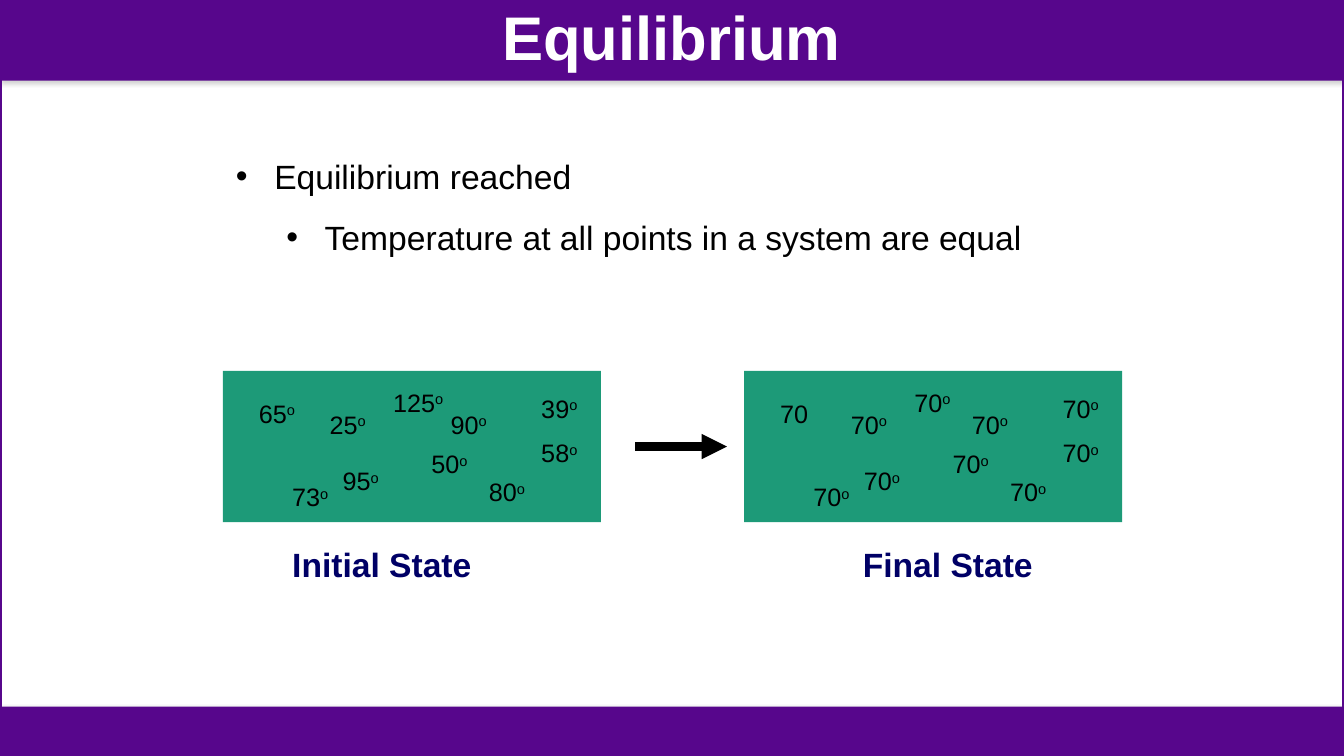
from lxml import etree
from pptx import Presentation
from pptx.dml.color import RGBColor as RGB
from pptx.enum.shapes import MSO_CONNECTOR as Link, MSO_SHAPE as Form
from pptx.enum.text import MSO_ANCHOR as Anchor, MSO_AUTO_SIZE as Auto, PP_ALIGN as Align
from pptx.oxml.ns import qn
from pptx.util import Inches, Pt

COLORS = {"purple": "57068C", "green": "1D9A78", "navy": "000066",
          "black": "000000", "white": "FFFFFF", "gray": "808080"}
SPOTS = [(0.26, 0.22), (0.59, 1.05), (1.59, 0.11), (1.97, 0.72), (3.06, 0.17),
         (0.96, 0.33), (2.54, 1.0), (1.09, 0.89), (2.16, 0.33), (3.06, 0.61)]
START = ["65o", "73o", "125o", "50o", "39o", "25o", "80o", "95o", "90o", "58o"]
END = ["70"] + ["70o"] * 9


def tint(name):
    return RGB.from_string(COLORS[name])


def node(root, tag, **attrs):
    item = etree.SubElement(root, qn(tag))
    for key, val in attrs.items():
        item.set(key, str(val))
    return item


def write(para, text, size=24, color="black", bold=False, raised=""):
    for part in filter(None, (text, raised)):
        run = para.add_run()
        run.text = part
        run.font.name = "Arial"
        run.font.size = Pt(size)
        run.font.bold = bold
        run.font.color.rgb = tint(color)
        if part is raised:
            run._r.get_or_add_rPr().set("baseline", "30000")


class Deck:
    def __init__(self):
        self.show = Presentation()
        self.show.slide_width = Inches(13.33)
        self.show.slide_height = Inches(7.5)
        self.slide = self.show.slides.add_slide(self.show.slide_layouts[1])
        self.shapes = self.slide.shapes

    def place(self, shape, box):
        shape.left, shape.top, shape.width, shape.height = map(Inches, box)
        shape.text_frame.word_wrap = True
        shape.text_frame.auto_size = Auto.NONE
        return shape.text_frame

    def rect(self, box, fill=None, line=None, shade=False, home=None):
        shape = (home or self.shapes).add_shape(Form.RECTANGLE, *map(Inches, box))
        shape.shadow.inherit = False
        if fill:
            shape.fill.solid()
            shape.fill.fore_color.rgb = tint(fill)
        else:
            shape.fill.background()
        if line:
            shape.line.color.rgb = tint(line)
            shape.line.width = Pt(2.25)
        else:
            shape.line.fill.background()
        if shade:
            glow = shape.element.spPr.find(qn("a:effectLst"))
            drop = node(glow, "a:outerShdw", blurRad=Pt(3.1), dist=Pt(1.8),
                        dir=90 * 60000, rotWithShape=0)
            hue = node(drop, "a:srgbClr", val=COLORS["gray"])
            node(hue, "a:alpha", val=35000)

    def title(self, text, box):
        shape = self.shapes.title
        frame = self.place(shape, box)
        frame.vertical_anchor = Anchor.MIDDLE
        para = frame.paragraphs[0]
        para.alignment = Align.CENTER
        para.line_spacing = 0.9
        write(para, text, size=44, color="white", bold=True)
        shape.element.getparent().append(shape.element)

    def bullets(self, lines, box):
        frame = self.place(self.slide.placeholders[1], box)
        for level, text in enumerate(lines):
            para = frame.add_paragraph() if level else frame.paragraphs[0]
            props = para._p.get_or_add_pPr()
            props.set("marL", str(Inches(0.38 + 0.5 * level)))
            props.set("indent", str(Inches(-0.38)))
            node(node(props, "a:buClr"), "a:srgbClr", val=COLORS["black"])
            node(props, "a:buFont", typeface="Arial")
            node(props, "a:buChar", char="•")
            para.level = level
            para.line_spacing = 1.5
            para.space_before = Pt(0)
            write(para, text)

    def label(self, text, box, home=None, **style):
        shape = (home or self.shapes).add_textbox(*map(Inches, box))
        write(self.place(shape, box).paragraphs[0], text, **style)

    def panel(self, left, temps):
        top = 3.68
        home = self.shapes.add_group_shape().shapes
        self.rect((left, top, 3.75, 1.5), fill="green", home=home)
        for (dx, dy), temp in zip(SPOTS, temps):
            digits = temp.rstrip("o")
            wide = 0.75 if len(digits) > 2 else 0.6
            self.label(digits, (left + dx, top + dy, wide, 0.4), home=home,
                       size=18, raised=temp[len(digits):])

    def arrow(self, left, right, y):
        line = self.shapes.add_connector(
            Link.STRAIGHT, Inches(left), Inches(y), Inches(right), Inches(y))
        line.line.color.rgb = tint("black")
        line.line.width = Pt(6)
        node(line.line._get_or_add_ln(), "a:tailEnd", type="triangle")
        node(line.element.spPr, "a:effectLst")


def main():
    deck = Deck()
    deck.rect((0, 0, 13.33, 0.8), fill="purple", shade=True)
    deck.rect((0, 0, 13.33, 7.5), line="purple")
    deck.rect((0, 7.01, 13.33, 0.5), fill="purple", shade=True)
    deck.title("Equilibrium", (0, 0, 13.33, 0.8))
    deck.bullets(["Equilibrium reached",
                  "Temperature at all points in a system are equal"],
                 (2.24, 1.3, 8.01, 4.95))
    deck.panel(2.21, START)
    deck.label("Initial State", (2.8, 5.35, 2.17, 1.04), color="navy", bold=True)
    deck.panel(7.38, END)
    deck.label("Final State", (8.46, 5.35, 2, 1.04), color="navy", bold=True)
    deck.arrow(6.3, 7.21, 4.43)
    deck.show.save("out.pptx")


if __name__ == "__main__":
    main()
